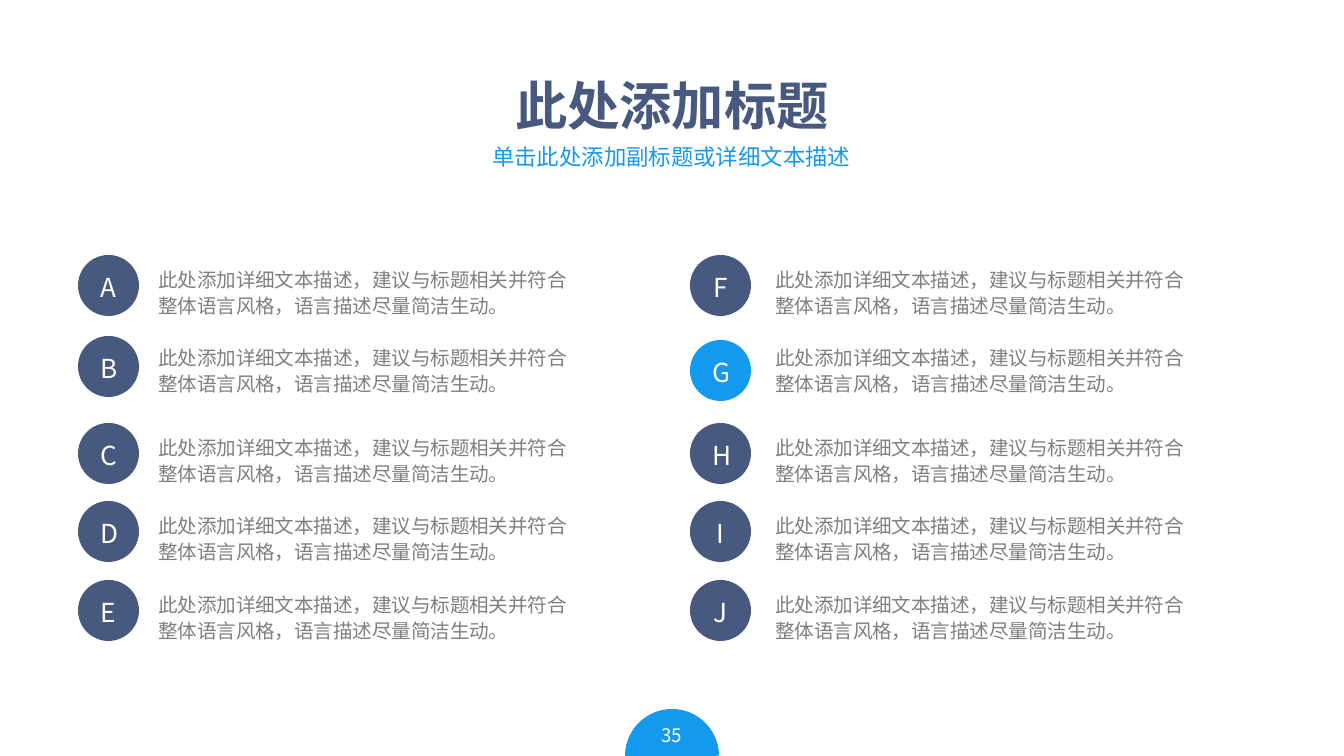
import lxml.etree
import pptx
import pptx.dml.color
import pptx.enum.shapes
import pptx.enum.text
import pptx.oxml.ns
import pptx.util

PX_PER_INCH = 134.4
FONT = "Noto Sans CJK SC"
COLORS = {"navy": "48597F", "blue": "1399EE", "gray": "7F7F7F", "white": "FFFFFF"}
DESCRIPTION = "此处添加详细文本描述，建议与标题相关并符合整体语言风格，语言描述尽量简洁生动。"
DESCRIPTION_TOPS = [262, 340, 430, 508, 587]
COLUMNS = [
    {"letters": "ABCDE", "badge_left": 78, "text_left": 145, "badge_tops": [255, 336, 423, 501, 580]},
    {"letters": "FGHIJ", "badge_left": 690, "text_left": 762, "badge_tops": [255, 340, 423, 501, 580]},
]
HIGHLIGHT = "G"


def px(*lengths):
    return [pptx.util.Emu(round(length * 914400 / PX_PER_INCH)) for length in lengths]


def rgb(color):
    return pptx.dml.color.RGBColor.from_string(COLORS[color])


def write_text(holder, text, size, color, bold=False, align="CENTER", anchor="MIDDLE", spacing=None):
    frame = holder.text_frame
    frame.word_wrap = True
    frame.vertical_anchor = pptx.enum.text.MSO_ANCHOR[anchor]
    paragraph = frame.paragraphs[0]
    paragraph.alignment = pptx.enum.text.PP_ALIGN[align]
    if spacing:
        paragraph.line_spacing = pptx.util.Pt(spacing)
    run = paragraph.add_run()
    run.text = text
    run.font.name = FONT
    run.font.size = pptx.util.Pt(size)
    run.font.bold = bold
    run.font.color.rgb = rgb(color)
    east_asian = lxml.etree.SubElement(run.font._element, pptx.oxml.ns.qn("a:ea"))
    east_asian.set("typeface", FONT)


def add_text(slide, box, text, **text_format):
    write_text(slide.shapes.add_textbox(*px(*box)), text, **text_format)


def add_filled_shape(slide, preset, box, color):
    shape = slide.shapes.add_shape(pptx.enum.shapes.MSO_SHAPE[preset], *px(*box))
    shape.shadow.inherit = False
    shape.fill.solid()
    shape.fill.fore_color.rgb = rgb(color)
    shape.line.fill.background()
    return shape


def add_badge(slide, left, top, letter):
    color = "blue" if letter == HIGHLIGHT else "navy"
    badge = add_filled_shape(slide, "OVAL", (left, top, 61, 61), color)
    write_text(badge, letter, size=14, color="white", spacing=18.2)


def add_column(slide, letters, badge_left, text_left, badge_tops):
    for letter, badge_top, text_top in zip(letters, badge_tops, DESCRIPTION_TOPS):
        add_badge(slide, badge_left, badge_top, letter)
        add_text(slide, (text_left, text_top, 448, 59), DESCRIPTION,
                 size=10.5, color="gray", align="LEFT", spacing=14)


def add_page_number(slide, number):
    half_disc = add_filled_shape(slide, "PIE", (625, 709, 94, 94), "blue")
    half_disc.adjustments[0] = 0
    half_disc.adjustments[1] = 107.82
    half_disc.rotation = 180
    add_text(slide, (643, 715, 57, 40), number, size=10, color="white")


def main():
    """Build the slide with two columns of lettered descriptions."""
    deck = pptx.Presentation()
    deck.slide_width, deck.slide_height = px(1344, 756)
    slide = deck.slides.add_slide(deck.slide_layouts[6])
    add_page_number(slide, "35")
    for column in COLUMNS:
        add_column(slide, **column)
    add_text(slide, (67, 42, 1210, 126), "此处添加标题", size=28, color="navy", bold=True)
    add_text(slide, (302, 129, 739, 47), "单击此处添加副标题或详细文本描述",
             size=12, color="blue", anchor="TOP", spacing=18.2)
    deck.save("out.pptx")


if __name__ == "__main__":
    main()
